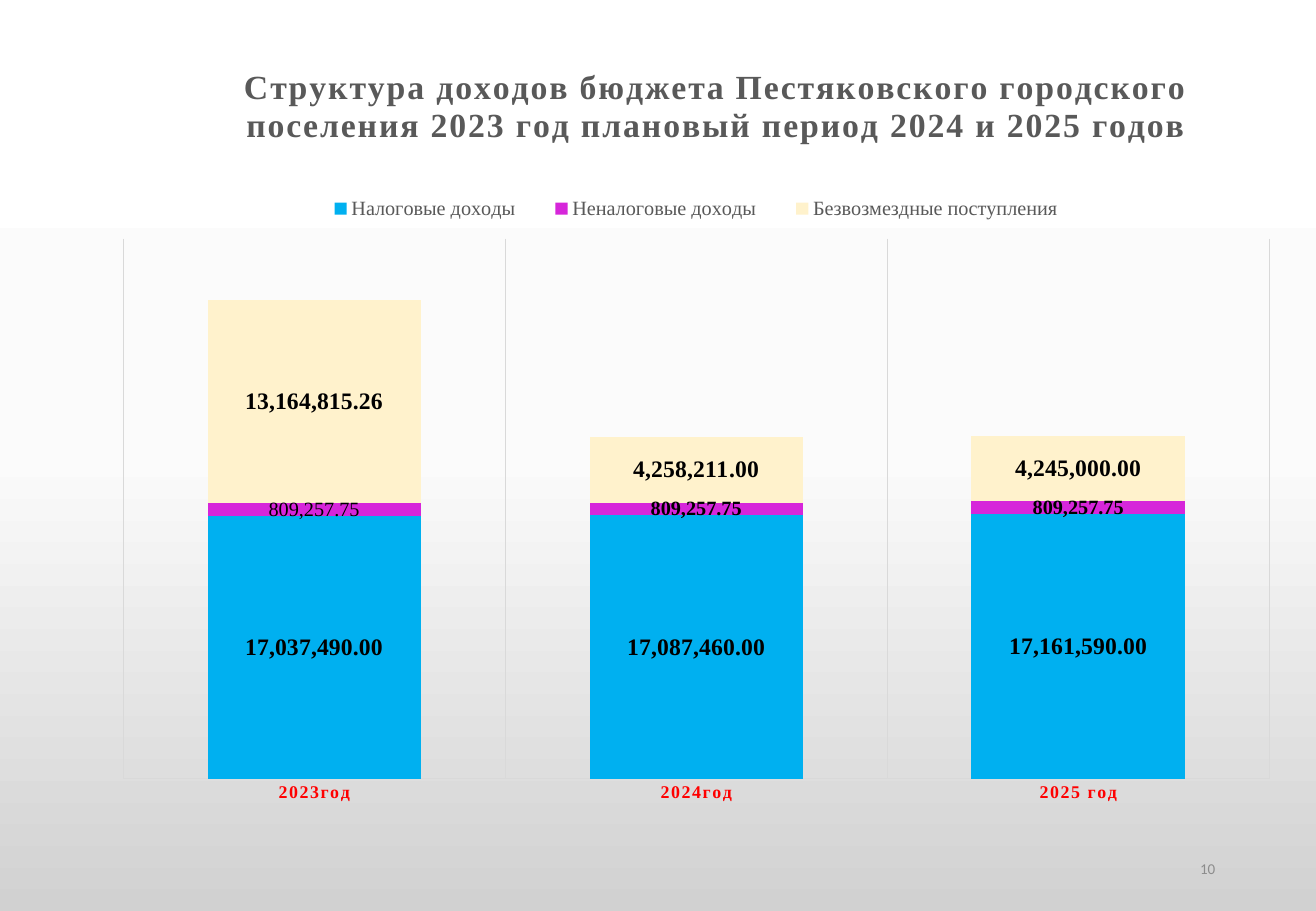
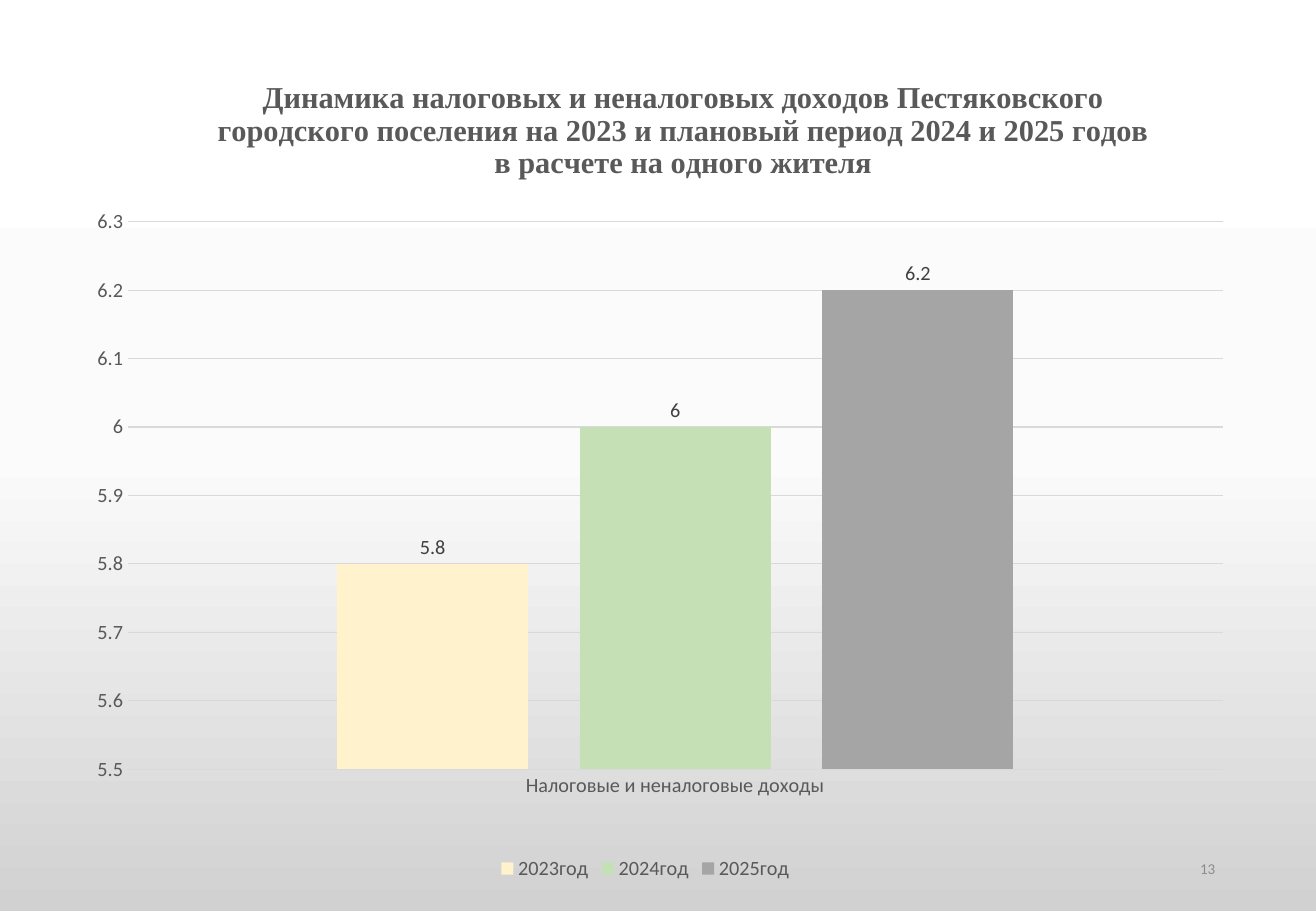
from copy import deepcopy

from lxml import etree
from pptx import Presentation
from pptx.chart.data import CategoryChartData
from pptx.dml.color import RGBColor
from pptx.enum.chart import XL_CHART_TYPE, XL_LABEL_POSITION, XL_LEGEND_POSITION, XL_TICK_MARK
from pptx.enum.text import MSO_ANCHOR, PP_ALIGN
from pptx.oxml.ns import qn
from pptx.util import Pt

PX = 9144
SERIF = "Times New Roman"
SANS = "Calibri"
MONEY = "#,##0.00"
SPACING = "100"

STACKED = XL_CHART_TYPE.COLUMN_STACKED
CLUSTERED = XL_CHART_TYPE.COLUMN_CLUSTERED
OUTSIDE = XL_LABEL_POSITION.OUTSIDE_END
TOP = XL_LEGEND_POSITION.TOP
BOTTOM = XL_LEGEND_POSITION.BOTTOM
NO_TICK = XL_TICK_MARK.NONE
MIDDLE = MSO_ANCHOR.MIDDLE
RIGHT = PP_ALIGN.RIGHT

BLACK = RGBColor(0x00, 0x00, 0x00)
RED = RGBColor(0xFF, 0x00, 0x00)
TEXT_GREY = RGBColor(0x59, 0x59, 0x59)
LABEL_GREY = RGBColor(0x40, 0x40, 0x40)
NUMBER_GREY = RGBColor(0x8C, 0x8C, 0x8C)
LINE_GREY = RGBColor(0xD9, 0xD9, 0xD9)
BLUE = RGBColor(0x00, 0xB0, 0xF0)
MAGENTA = RGBColor(0xD6, 0x26, 0xDA)
CREAM = RGBColor(0xFF, 0xF2, 0xCC)
GREEN = RGBColor(0xC5, 0xE0, 0xB4)
GREY = RGBColor(0xA5, 0xA5, 0xA5)
BACKDROP = (
    (0, RGBColor(0xFF, 0xFF, 0xFF)),
    (0.5, RGBColor(0xFB, 0xFB, 0xFB)),
    (1, RGBColor(0xD1, 0xD1, 0xD1)),
)


def set_values(target, **values):
    """Set each named attribute on the target."""
    for name, value in values.items():
        setattr(target, name, value)


def style_font(font, size, color, name=SERIF, bold=False):
    """Give a font its face, size, weight and colour."""
    set_values(font, name=name, size=Pt(size), bold=bold)
    font.color.rgb = color


def style_line(line):
    """Draw a thin light grey line."""
    line.width = Pt(0.75)
    line.color.rgb = LINE_GREY


def paint_backdrop(master):
    """Give the master the shared vertical gradient."""
    fill = master.background.fill
    fill.gradient()
    fill.gradient_angle = 270
    stop_list = master.element.find(".//" + qn("a:gsLst"))
    stop_list.insert(1, deepcopy(stop_list[0]))
    for stop, (position, color) in zip(fill.gradient_stops, BACKDROP):
        stop.position = position
        stop.color.rgb = color


def set_layout(chart, tag, inner=False, **fractions):
    """Place a part of the chart by fractions of the chart area."""
    owner = chart.element.find(".//" + qn(tag))
    old = owner.find(qn("c:layout"))
    if old is not None:
        owner.remove(old)
    layout = etree.Element(qn("c:layout"))
    manual = etree.SubElement(layout, qn("c:manualLayout"))
    values = {"layoutTarget": "inner"} if inner else {}
    values.update({f"{key}Mode": "edge" for key in "xy"})
    values.update(fractions)
    for key, value in values.items():
        etree.SubElement(manual, qn("c:" + key)).set("val", str(value))
    overlay = owner.find(qn("c:overlay"))
    owner.insert(0 if overlay is None else owner.index(overlay), layout)


def space_letters(chart, tag):
    """Widen the letter spacing in one part of the chart."""
    owner = chart.element.find(".//" + qn(tag))
    for properties in owner.iter(qn("a:rPr"), qn("a:defRPr")):
        properties.set("spc", SPACING)


def add_chart(slide, box, kind, categories, series, gap, overlap):
    """Add a column chart with coloured series, given as name, values, colour."""
    data = CategoryChartData()
    data.categories = categories
    for name, values, _ in series:
        data.add_series(name, values)
    frame = slide.shapes.add_chart(kind, *(side * PX for side in box), data)
    chart = frame.chart
    style_font(chart.font, 10, BLACK, SANS)
    plot = chart.plots[0]
    set_values(plot, gap_width=gap, overlap=overlap, vary_by_categories=False)
    for bars, (_, _, color) in zip(plot.series, series):
        bars.format.fill.solid()
        bars.format.fill.fore_color.rgb = color
    return chart


def add_title(chart, text, size, x, y):
    """Write the bold chart title at the given place."""
    chart.has_title = True
    frame = chart.chart_title.text_frame
    frame.text = text
    style_font(frame.paragraphs[0].runs[0].font, size, TEXT_GREY, bold=True)
    set_layout(chart, "c:title", x=x, y=y)


def add_legend(chart, position, face):
    """Show the legend at one side of the chart."""
    chart.has_legend = True
    set_values(chart.legend, position=position, include_in_layout=False)
    style_font(chart.legend.font, 12, TEXT_GREY, face)


def style_axis(axis, size, color, grid, **font_values):
    """Set an axis without ticks, with or without gridlines."""
    set_values(axis, major_tick_mark=NO_TICK, minor_tick_mark=NO_TICK,
               has_major_gridlines=grid)
    style_font(axis.tick_labels.font, size, color, **font_values)
    style_line(axis.format.line)
    if grid:
        style_line(axis.major_gridlines.format.line)


def label_series(bars, size, color, number_format, **font_values):
    """Show the values of one series and return its labels."""
    labels = bars.data_labels
    set_values(labels, show_value=True, number_format=number_format,
               number_format_is_linked=False)
    style_font(labels.font, size, color, **font_values)
    return labels


def add_page_number(slide, number):
    """Write the page number at the bottom right."""
    box = slide.shapes.add_textbox(766 * PX, 695 * PX, 244 * PX, 40 * PX)
    set_values(box.text_frame, word_wrap=True, vertical_anchor=MIDDLE)
    para = box.text_frame.paragraphs[0]
    para.alignment = RIGHT
    span = para.add_run()
    span.text = str(number)
    style_font(span.font, 8.9, NUMBER_GREY, SANS)


def build_structure(slide):
    """Build the stacked chart of income by kind."""
    series = (
        ("Налоговые доходы", (17037490, 17087460, 17161590), BLUE),
        ("Неналоговые доходы", (809257.75,) * 3, MAGENTA),
        ("Безвозмездные поступления", (13164815.26, 4258211, 4245000), CREAM),
    )
    chart = add_chart(slide, (49, 20, 1048, 706), STACKED,
                      ("2023год", "2024год", "2025 год"), series, 79, 100)
    add_title(chart, "Структура доходов бюджета Пестяковского городского "
              "поселения 2023 год плановый период 2024 и 2025 годов", 20, 0.14, 0.04)
    space_letters(chart, "c:title")
    add_legend(chart, TOP, SERIF)
    set_layout(chart, "c:legend", x=0.19, y=0.19, w=0.62, h=0.05)
    set_layout(chart, "c:plotArea", inner=True, x=0.05, y=0.25, w=0.9, h=0.63)
    style_axis(chart.category_axis, 10.6, RED, True, bold=True)
    space_letters(chart, "c:catAx")
    set_values(chart.value_axis, visible=False, has_major_gridlines=False,
               minimum_scale=0, maximum_scale=35000000)
    for bars, size in zip(chart.plots[0].series, (14, 12, 14)):
        label_series(bars, size, BLACK, MONEY, bold=True)
    frame = chart.plots[0].series[1].points[0].data_label.text_frame
    frame.text = "809,257.75"
    style_font(frame.paragraphs[0].runs[0].font, 12, BLACK)


def build_dynamics(slide):
    """Build the clustered chart of income per resident."""
    series = (("2023год", (5.8,), CREAM), ("2024год", (6,), GREEN), ("2025год", (6.2,), GREY))
    chart = add_chart(slide, (36, 46, 990, 683), CLUSTERED,
                      ("Налоговые и неналоговые доходы",), series, 219, -27)
    add_title(chart, "Динамика налоговых и неналоговых доходов Пестяковского "
              "городского поселения на 2023 и плановый период 2024 и 2025 годов "
              "в расчете на одного жителя", 18, 0.14, 0.02)
    add_legend(chart, BOTTOM, SANS)
    set_layout(chart, "c:plotArea", inner=True, x=0.07, y=0.2, w=0.91, h=0.66)
    style_axis(chart.category_axis, 12, TEXT_GREY, False, name=SANS)
    style_axis(chart.value_axis, 12, TEXT_GREY, True, name=SANS)
    chart.value_axis.format.line.fill.background()
    set_values(chart.value_axis, minimum_scale=5.5, maximum_scale=6.3, major_unit=0.1)
    for bars in chart.plots[0].series:
        label_series(bars, 12, LABEL_GREY, "General", name=SANS).position = OUTSIDE


def main():
    """Build both slides and save the deck."""
    deck = Presentation()
    set_values(deck, slide_width=1083 * PX, slide_height=750 * PX)
    paint_backdrop(deck.slide_master)
    for build, number in ((build_structure, 10), (build_dynamics, 13)):
        slide = deck.slides.add_slide(deck.slide_layouts[6])
        build(slide)
        add_page_number(slide, number)
    deck.save("out.pptx")


if __name__ == "__main__":
    main()
